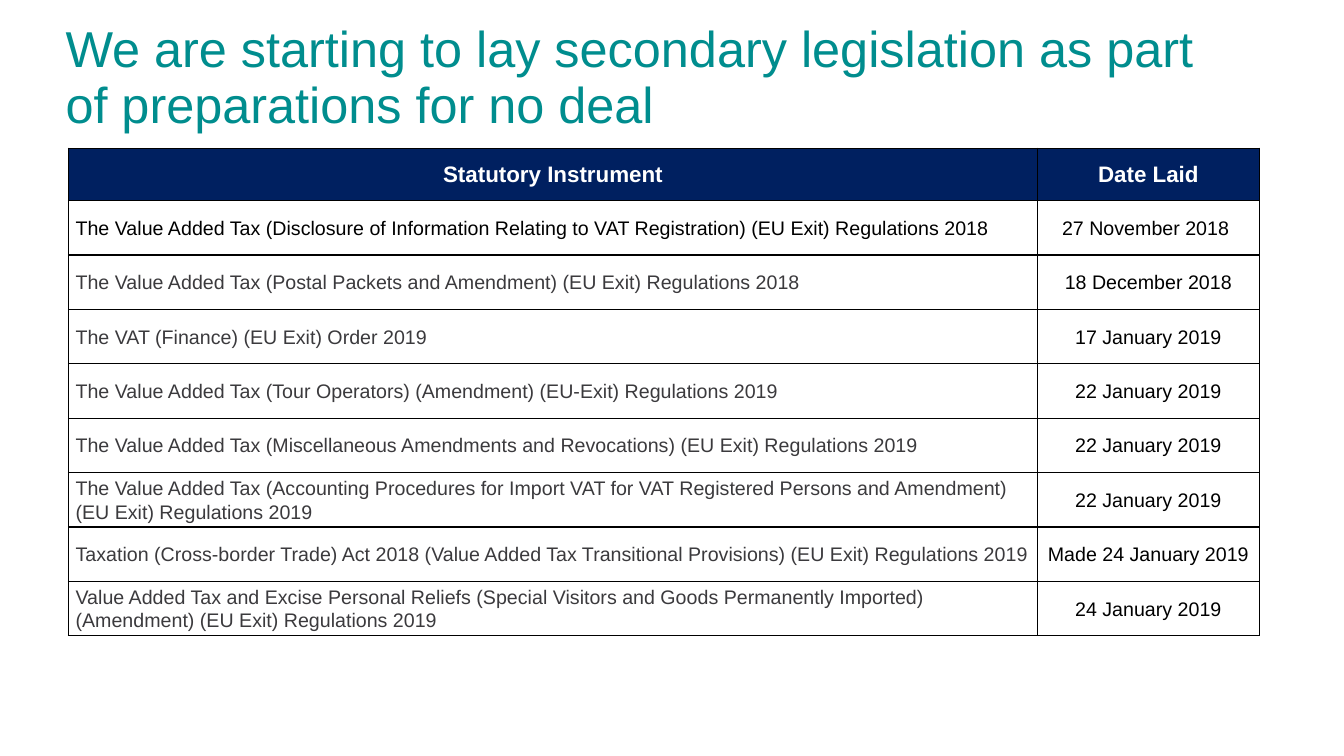
from lxml.etree import SubElement
from pptx import Presentation
from pptx.dml.color import RGBColor
from pptx.enum.text import MSO_ANCHOR as Anchor, MSO_AUTO_SIZE as Fit, PP_ALIGN as Align
from pptx.oxml.ns import qn
from pptx.util import Inches, Pt

TEAL = RGBColor(0x00, 0x8D, 0x8E)
NAVY = RGBColor(0x00, 0x20, 0x60)
WHITE = RGBColor(0xFF, 0xFF, 0xFF)
BLACK = RGBColor(0x00, 0x00, 0x00)
GREY = RGBColor(0x3B, 0x3A, 0x3D)

TITLE = "We are starting to lay secondary legislation as part \vof preparations for no deal"
HEADS = ("Statutory Instrument", "Date Laid")
LAWS = [
    ("The Value Added Tax (Disclosure of Information Relating to VAT Registration) "
     "(EU Exit) Regulations 2018", "27 November 2018 "),
    ("The Value Added Tax (Postal Packets and Amendment) (EU Exit) Regulations 2018",
     "18 December 2018"),
    ("The VAT (Finance) (EU Exit) Order 2019", "17 January 2019"),
    ("The Value Added Tax (Tour Operators) (Amendment) (EU-Exit) Regulations 2019",
     "22 January 2019"),
    ("The Value Added Tax (Miscellaneous Amendments and Revocations) "
     "(EU Exit) Regulations 2019", "22 January 2019"),
    ("The Value Added Tax (Accounting Procedures for Import VAT for VAT Registered "
     "Persons and Amendment) (EU Exit) Regulations 2019", "22 January 2019"),
    ("Taxation (Cross-border Trade) Act 2018 (Value Added Tax Transitional Provisions) "
     "(EU Exit) Regulations 2019", "Made 24 January 2019"),
    ("Value Added Tax and Excise Personal Reliefs (Special Visitors and Goods "
     "Permanently Imported) (Amendment) (EU Exit) Regulations 2019", "24 January 2019"),
]
COLS = (9.61, 2.2)
HEAD_H, ROW_H = 0.52, 0.54
PAD = Inches(0.07)


def assign(item, values):
    for name, value in values.items():
        setattr(item, name, value)


def style(par, size, color, bold=False, **layout):
    assign(par, layout)
    assign(par.font, {"name": "Arial", "size": Pt(size), "bold": bold})
    par.font.color.rgb = color


def border(cell):
    """Draw a thin black line on all four sides, ahead of the cell's fill."""
    props = cell._tc.get_or_add_tcPr()
    for spot, side in enumerate(("lnL", "lnR", "lnT", "lnB")):
        line = SubElement(props, qn(f"a:{side}"), w=str(Pt(1)))
        fill = SubElement(line, qn("a:solidFill"))
        SubElement(fill, qn("a:srgbClr"), val=str(BLACK))
        props.insert(spot, line)


def add_title(slide):
    title = slide.shapes.title
    assign(title, {"left": Inches(0.65), "top": Inches(0.21),
                   "width": Inches(12), "height": Inches(1.18)})
    frame = title.text_frame
    assign(frame, {"text": TITLE, "word_wrap": True, "auto_size": Fit.NONE,
                   "vertical_anchor": Anchor.TOP, "margin_left": 0,
                   "margin_right": 0, "margin_top": 0, "margin_bottom": 0})
    style(frame.paragraphs[0], 36, TEAL, alignment=Align.LEFT, line_spacing=Pt(40))


def add_laws(slide):
    rows = [HEADS, *LAWS]
    high = HEAD_H + ROW_H * len(LAWS)
    table = slide.shapes.add_table(len(rows), len(COLS), Inches(0.68), Inches(1.47),
                                   Inches(sum(COLS)), Inches(high)).table
    for col, width in zip(table.columns, COLS):
        col.width = Inches(width)
    for r, texts in enumerate(rows):
        head = r == 0
        table.rows[r].height = Inches(HEAD_H if head else ROW_H)
        for c, text in enumerate(texts):
            cell = table.cell(r, c)
            assign(cell, {"text": text, "vertical_anchor": Anchor.MIDDLE,
                          "margin_left": PAD, "margin_right": PAD,
                          "margin_top": 0, "margin_bottom": 0})
            if head:
                cell.fill.solid()
                cell.fill.fore_color.rgb = NAVY
            else:
                cell.fill.background()
            border(cell)
            ink = WHITE if head else GREY if c == 0 and r > 1 else BLACK
            side = Align.CENTER if head or c else Align.LEFT
            style(cell.text_frame.paragraphs[0], 16 if head else 14, ink, head,
                  alignment=side, line_spacing=1.07)


def main():
    deck = Presentation()
    assign(deck, {"slide_width": Inches(13.33), "slide_height": Inches(7.5)})
    slide = deck.slides.add_slide(deck.slide_layouts.get_by_name("Title Only"))
    add_title(slide)
    add_laws(slide)
    deck.save("out.pptx")


if __name__ == "__main__":
    main()
